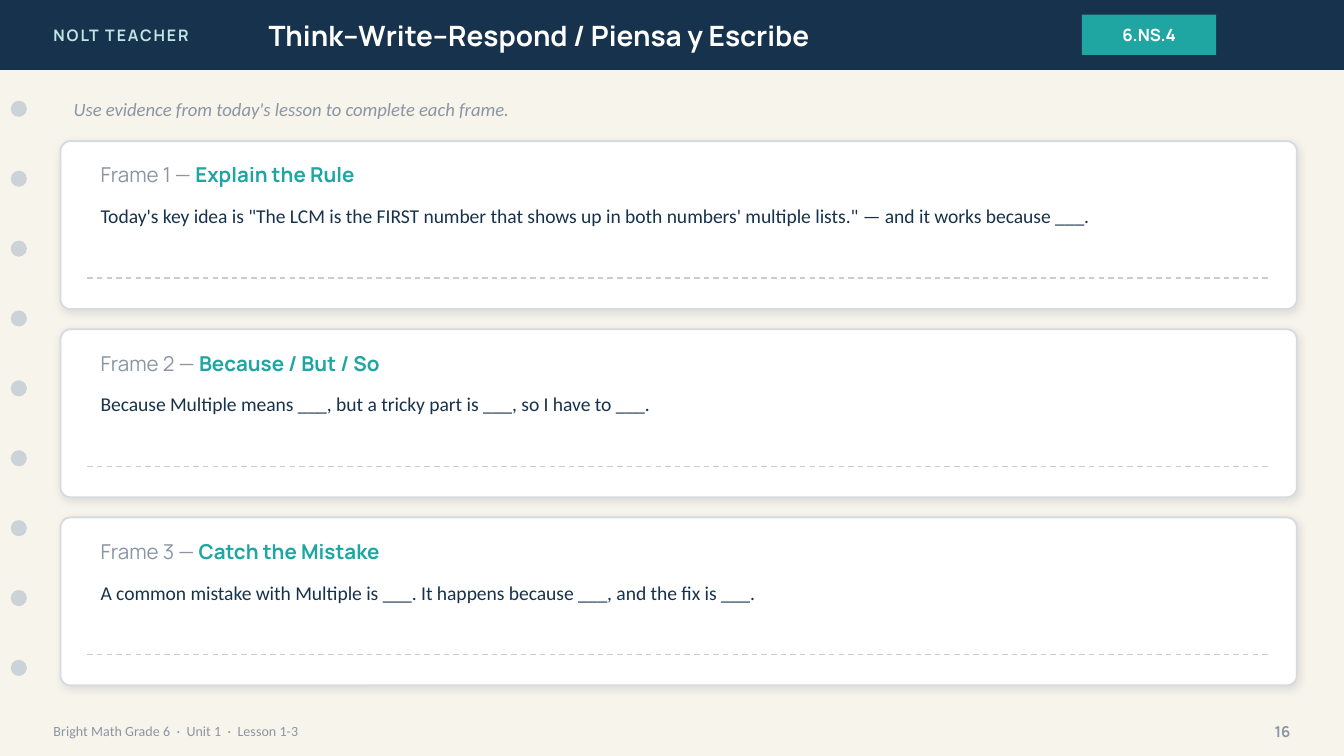
"""Build the Think-Write-Respond lesson slide with three sentence frames."""
import lxml.etree
import pptx
import pptx.dml.color
import pptx.enum.dml
import pptx.enum.shapes
import pptx.enum.text
import pptx.oxml
import pptx.oxml.ns
import pptx.util

RGBColor = pptx.dml.color.RGBColor
SHAPE = pptx.enum.shapes.MSO_SHAPE
ALIGN = pptx.enum.text.PP_ALIGN
ANCHOR = pptx.enum.text.MSO_ANCHOR

CREAM = RGBColor(0xF7, 0xF4, 0xEC)
NAVY = RGBColor(0x17, 0x32, 0x4D)
MINT = RGBColor(0xBF, 0xE6, 0xE2)
TEAL = RGBColor(0x1F, 0xA6, 0xA2)
WHITE = RGBColor(0xFF, 0xFF, 0xFF)
GREY = RGBColor(0x8A, 0x96, 0xA3)
DOT_GREY = RGBColor(0xCB, 0xD3, 0xD9)
EDGE_GREY = RGBColor(0xD6, 0xDB, 0xDF)
RULE_GREY = RGBColor(0xC7, 0xCD, 0xD2)
SHADOW = RGBColor(0x1C, 0x2E, 0x42)

HEADING = "Manrope"
BODY = "Calibri"

SERIES = "NOLT TEACHER"
TITLE = "Think–Write–Respond / Piensa y Escribe"
STANDARD = "6.NS.4"
INSTRUCTION = "Use evidence from today's lesson to complete each frame."
FOOTER = "Bright Math Grade 6  ·  Unit 1  ·  Lesson 1-3"
PAGE_NUMBER = "16"
FRAMES = [
    ("Explain the Rule",
     "Today's key idea is \"The LCM is the FIRST number that shows up in both "
     "numbers' multiple lists.\" — and it works because ___."),
    ("Because / But / So",
     "Because Multiple means ___, but a tricky part is ___, so I have to ___."),
    ("Catch the Mistake",
     "A common mistake with Multiple is ___. It happens because ___, "
     "and the fix is ___."),
]

PX = 4572
WIDTH, HEIGHT = 2000, 1125
BAR_HEIGHT = 104
DOT_COUNT, DOT_TOP, DOT_STEP, DOT_SIZE = 9, 150, 104, 24
CARD_LEFT, CARD_TOP, CARD_WIDTH, CARD_HEIGHT = 90, 210, 1840, 250
CARD_STEP = 280
CONTENT_LEFT, CONTENT_WIDTH = 130, 1760


def px(*lengths):
    return [pptx.util.Emu(length * PX) for length in lengths]


def add_span(para, text, font, size, color, bold=False, italic=False, spacing=0):
    span = para.add_run()
    span.text = text
    span.font.name = font
    span.font.size = pptx.util.Pt(size)
    span.font.color.rgb = color
    span.font.bold = bold
    span.font.italic = italic
    if spacing:
        span._r.get_or_add_rPr().set("spc", str(spacing * 100))


def write(shape, spans, align=ALIGN.LEFT, anchor=ANCHOR.MIDDLE):
    frame = shape.text_frame
    frame.word_wrap = True
    frame.vertical_anchor = anchor
    para = frame.paragraphs[0]
    para.alignment = align
    for text, font, size, color, *style in spans:
        add_span(para, text, font, size, color, *style)


def add_text(page, area, spans, **layout):
    write(page.shapes.add_textbox(*px(*area)), spans, **layout)


def add_block(page, kind, area, fill):
    block = page.shapes.add_shape(kind, *px(*area))
    block.shadow.inherit = False
    block.fill.solid()
    block.fill.fore_color.rgb = fill
    block.line.fill.background()
    return block


def add_shadow(shape):
    effects = shape._element.spPr.find(pptx.oxml.ns.qn("a:effectLst"))
    effects.append(pptx.oxml.parse_xml(
        f'<a:outerShdw {pptx.oxml.ns.nsdecls("a")} blurRad="50800" dist="12700" '
        f'dir="5400000" algn="bl" rotWithShape="0"><a:srgbClr val="{SHADOW}">'
        '<a:alpha val="10000"/></a:srgbClr></a:outerShdw>'))


def add_answer_line(page, y):
    rule = page.shapes.add_connector(
        pptx.enum.shapes.MSO_CONNECTOR.STRAIGHT,
        *px(CONTENT_LEFT, y, CONTENT_LEFT + CONTENT_WIDTH, y))
    rule.line.color.rgb = RULE_GREY
    rule.line.width = pptx.util.Pt(0.75)
    rule.line.dash_style = pptx.enum.dml.MSO_LINE.DASH
    lxml.etree.SubElement(rule._element.spPr, pptx.oxml.ns.qn("a:effectLst"))


def add_frame(page, index, name, sentence):
    top = CARD_TOP + index * CARD_STEP
    card = add_block(page, SHAPE.ROUNDED_RECTANGLE,
                     (CARD_LEFT, top, CARD_WIDTH, CARD_HEIGHT), WHITE)
    card.adjustments[0] = 0.06
    card.line.color.rgb = EDGE_GREY
    card.line.width = pptx.util.Pt(1)
    add_shadow(card)
    add_text(page, (CONTENT_LEFT, top + 20, CONTENT_WIDTH, 60),
             [(f"Frame {index + 1} — ", HEADING, 11, GREY),
              (name, HEADING, 11, TEAL, True)])
    add_text(page, (CONTENT_LEFT, top + 84, CONTENT_WIDTH, 80),
             [(sentence, BODY, 10.5, NAVY)], anchor=ANCHOR.TOP)
    add_answer_line(page, top + 204)


def main():
    deck = pptx.Presentation()
    deck.slide_width, deck.slide_height = px(WIDTH, HEIGHT)
    page = deck.slides.add_slide(deck.slide_layouts[6])
    page.background.fill.solid()
    page.background.fill.fore_color.rgb = CREAM

    add_block(page, SHAPE.RECTANGLE, (0, 0, WIDTH, BAR_HEIGHT), NAVY)
    add_text(page, (60, 0, 480, BAR_HEIGHT),
             [(SERIES, HEADING, 8.5, MINT, True, False, 1)])
    add_text(page, (380, 0, 1120, BAR_HEIGHT), [(TITLE, HEADING, 15, WHITE, True)])
    badge = add_block(page, SHAPE.RECTANGLE, (1610, 22, 200, 60), TEAL)
    write(badge, [(STANDARD, HEADING, 9, WHITE, True)], align=ALIGN.CENTER)

    for index in range(DOT_COUNT):
        add_block(page, SHAPE.OVAL,
                  (16, DOT_TOP + index * DOT_STEP, DOT_SIZE, DOT_SIZE), DOT_GREY)

    add_text(page, (60, 1060, 1400, 56), [(FOOTER, BODY, 7.5, GREY)])
    add_text(page, (1840, 1060, 100, 56),
             [(PAGE_NUMBER, HEADING, 8, GREY, True)], align=ALIGN.RIGHT)
    add_text(page, (CARD_LEFT, 132, CARD_WIDTH, 60),
             [(INSTRUCTION, BODY, 10, GREY, False, True)])

    for index, (name, sentence) in enumerate(FRAMES):
        add_frame(page, index, name, sentence)

    deck.save("out.pptx")


if __name__ == "__main__":
    main()
